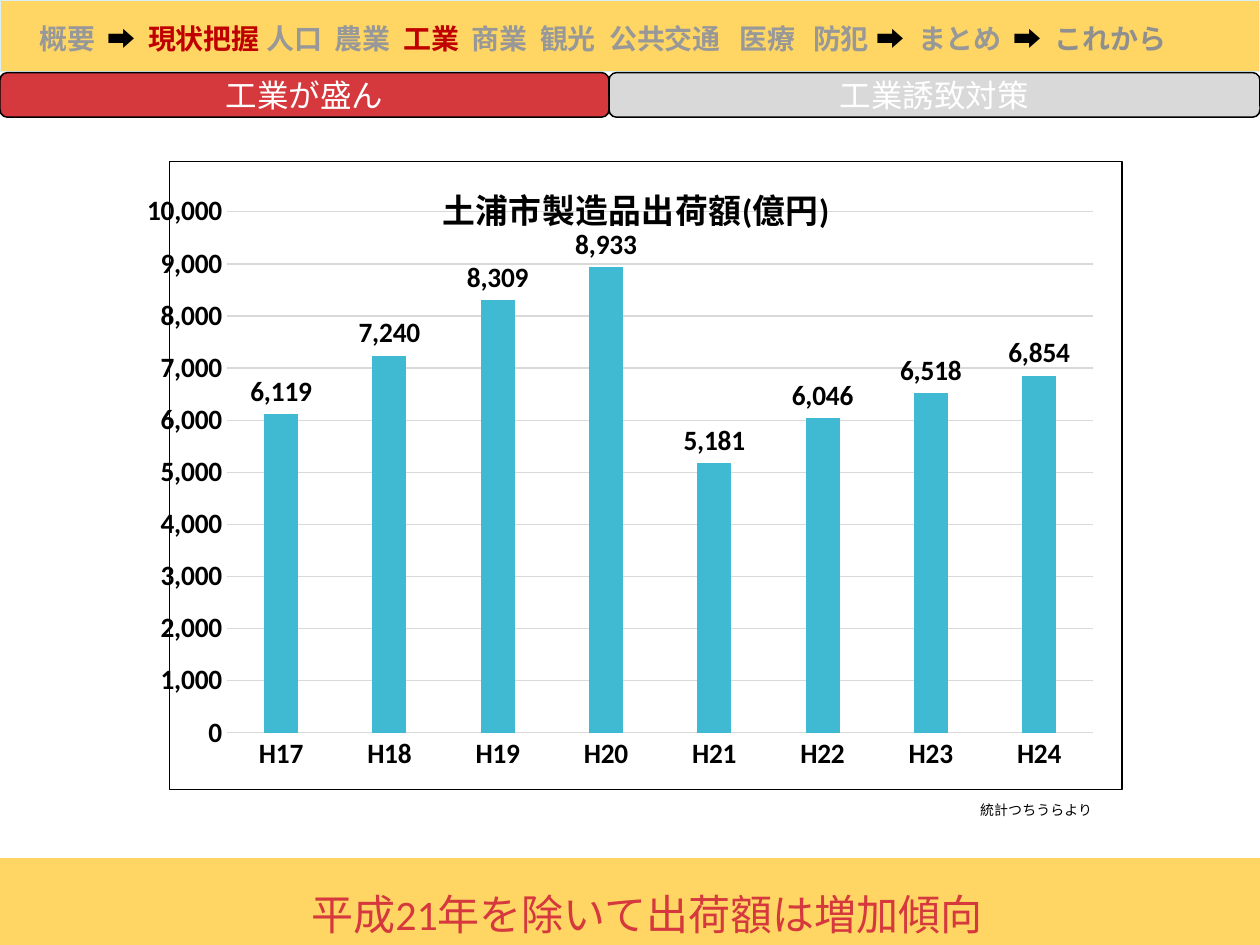
import pptx
import pptx.chart.data
import pptx.dml.color
import pptx.enum.chart
import pptx.enum.shapes
import pptx.enum.text
import pptx.oxml
import pptx.oxml.ns
import pptx.util
from lxml import etree

Pt = pptx.util.Pt
Align = pptx.enum.text.PP_ALIGN
Anchor = pptx.enum.text.MSO_ANCHOR
Preset = pptx.enum.shapes.MSO_SHAPE

THEME = {
    "font": "Calibri", "note_font": "Times New Roman",
    "gold": "FFD663", "pale": "D9F1F6", "red": "D5393D", "active": "C00000",
    "muted": "989898", "last": "8F8F8F", "grey": "D9D9D9", "bar": "40BAD2",
    "black": "000000", "white": "FFFFFF",
    "chart_size": 16, "title_size": 19.2, "nav_size": 16, "tab_size": 18,
    "message_size": 24, "note_size": 8, "outline": 0.85, "rule": 0.75,
}

NAV = [
    ("概要", "muted", 0), ("➡", "black", 39), ("現状把握", "active", 62),
    ("人口", "muted", 129.5), ("農業", "muted", 168.5), ("工業", "active", 208),
    ("商業", "muted", 247), ("観光", "muted", 286), ("公共交通", "muted", 325.5),
    ("医療", "muted", 400), ("防犯", "muted", 442), ("➡", "black", 478),
    ("まとめ", "muted", 502), ("➡", "black", 556.5), ("これから", "last", 580),
]
BANDS = [((0, 0, 720, 41), "pale"), ((0, 490.5, 720, 49.5), "gold")]
TABS = [("工業が盛ん", "red", 348), ("工業誘致対策", "grey", 372)]
TAB_TOP, TAB_HEIGHT = 41.5, 25.5
SHIPMENTS = {"H17": 6119, "H18": 7240, "H19": 8309, "H20": 8933,
             "H21": 5181, "H22": 6046, "H23": 6518, "H24": 6854}
CHART_TITLE = "土浦市製造品出荷額(億円)"
CHART_BOX = (84, 92, 557.5, 359.5)
PLOT_LAYOUT = {"x": 0.06, "y": 0.08, "w": 0.91, "h": 0.83}
TITLE_LAYOUT = {"x": 0.28, "y": 0.02}
MESSAGE = "平成21年を除いて出荷額は増加傾向"
NOTE = "統計つちうらより"


def color(name):
    return pptx.dml.color.RGBColor.from_string(THEME[name])


def style(font, size, tint, bold=False, face="font"):
    font.size = Pt(size)
    font.name = THEME[face]
    font.bold = bold
    font.color.rgb = color(tint)


def add_span(para, text, *look, **options):
    span = para.add_run()
    span.text = text
    style(span.font, *look, **options)


def add_block(page, preset, place, fill, line):
    block = page.shapes.add_shape(preset, *map(Pt, place))
    block.shadow.inherit = False
    block.fill.solid()
    block.fill.fore_color.rgb = color(fill)
    block.line.color.rgb = color(line)
    block.line.width = Pt(THEME["outline"])
    return block


def add_text(page, place, align, wrap=True):
    box = page.shapes.add_textbox(*map(Pt, place))
    box.text_frame.word_wrap = wrap
    para = box.text_frame.paragraphs[0]
    para.alignment = align
    return box.text_frame, para


def add_navigation(page):
    frame, para = add_text(page, (15.5, 0.5, 704.5, 42.5), Align.LEFT)
    frame.vertical_anchor = Anchor.MIDDLE
    for index, (word, tint, stop) in enumerate(NAV):
        lead = "\t" if index else ""
        add_span(para, lead + word, THEME["nav_size"], tint, bold=True)
    properties = para._p.get_or_add_pPr()
    stops = etree.SubElement(properties, pptx.oxml.ns.qn("a:tabLst"))
    for word, tint, stop in NAV[1:]:
        etree.SubElement(stops, pptx.oxml.ns.qn("a:tab"), pos=str(Pt(stop)), algn="l")


def make_layout(fractions, inner=False):
    layout = etree.Element(pptx.oxml.ns.qn("c:layout"))
    manual = etree.SubElement(layout, pptx.oxml.ns.qn("c:manualLayout"))
    settings = [("layoutTarget", "inner")] if inner else []
    settings += [(key + "Mode", "edge") for key in ("x", "y")]
    settings += list(fractions.items())
    for tag, value in settings:
        etree.SubElement(manual, pptx.oxml.ns.qn("c:" + tag), val=str(value))
    return layout


def set_layout(parent, layout, position):
    for old in parent.findall(pptx.oxml.ns.qn("c:layout")):
        parent.remove(old)
    parent.insert(position, layout)


def add_shipments(page):
    data = pptx.chart.data.CategoryChartData(number_format="#,##0")
    data.categories = list(SHIPMENTS)
    data.add_series("Series 1", list(SHIPMENTS.values()))
    kind = pptx.enum.chart.XL_CHART_TYPE.COLUMN_CLUSTERED
    chart = page.shapes.add_chart(kind, *map(Pt, CHART_BOX), data).chart
    look = (THEME["chart_size"], "black", True)
    style(chart.font, *look)
    chart.has_legend = False

    chart.has_title = True
    para = chart.chart_title.text_frame.paragraphs[0]
    add_span(para, CHART_TITLE, THEME["title_size"], "black", bold=True)
    set_layout(chart.chart_title._element, make_layout(TITLE_LAYOUT), 1)
    set_layout(chart._chartSpace.chart.plotArea, make_layout(PLOT_LAYOUT, True), 0)

    plot = chart.plots[0]
    plot.gap_width, plot.overlap = 219, -27
    plot.vary_by_categories = False
    bars = plot.series[0].format.fill
    bars.solid()
    bars.fore_color.rgb = color("bar")
    plot.has_data_labels = True
    labels = plot.data_labels
    labels.show_value = True
    labels.number_format = "#,##0"
    labels.number_format_is_linked = False
    labels.position = pptx.enum.chart.XL_LABEL_POSITION.OUTSIDE_END
    style(labels.font, *look)

    values = chart.value_axis
    values.minimum_scale, values.maximum_scale, values.major_unit = 0, 10000, 1000
    values.tick_labels.number_format = "#,##0"
    values.tick_labels.number_format_is_linked = False
    for axis in (chart.category_axis, values):
        axis.major_tick_mark = pptx.enum.chart.XL_TICK_MARK.NONE
        style(axis.tick_labels.font, *look)
    values.format.line.fill.background()
    for rule in (chart.category_axis.format.line, values.major_gridlines.format.line):
        rule.color.rgb = color("grey")
        rule.width = Pt(THEME["rule"])

    border = pptx.oxml.parse_xml(
        f'<c:spPr {pptx.oxml.ns.nsdecls("c", "a")}><a:noFill/>'
        f'<a:ln w="{Pt(THEME["rule"])}"><a:solidFill><a:srgbClr val="{THEME["black"]}"/>'
        '</a:solidFill></a:ln></c:spPr>')
    chart._chartSpace.chart.addnext(border)


def main():
    deck = pptx.Presentation()
    deck.slide_width, deck.slide_height = Pt(720), Pt(540)
    page = deck.slides.add_slide(deck.slide_layouts[6])

    for place, line in BANDS:
        add_block(page, Preset.RECTANGLE, place, "gold", line)
    add_navigation(page)
    add_shipments(page)

    frame, para = add_text(page, (0, 504, 739.5, 36), Align.CENTER)
    add_span(para, MESSAGE, THEME["message_size"], "red")

    left = 0
    for label, fill, width in TABS:
        place = (left, TAB_TOP, width, TAB_HEIGHT)
        tab = add_block(page, Preset.ROUNDED_RECTANGLE, place, fill, "black")
        tab.text_frame.vertical_anchor = Anchor.MIDDLE
        para = tab.text_frame.paragraphs[0]
        para.alignment = Align.CENTER
        add_span(para, label, THEME["tab_size"], "white")
        left += width

    frame, para = add_text(page, (553, 455, 79, 16.5), Align.JUSTIFY, wrap=False)
    para.line_spacing = Pt(9)
    add_span(para, NOTE, THEME["note_size"], "black", face="note_font")

    deck.save("out.pptx")


if __name__ == "__main__":
    main()
